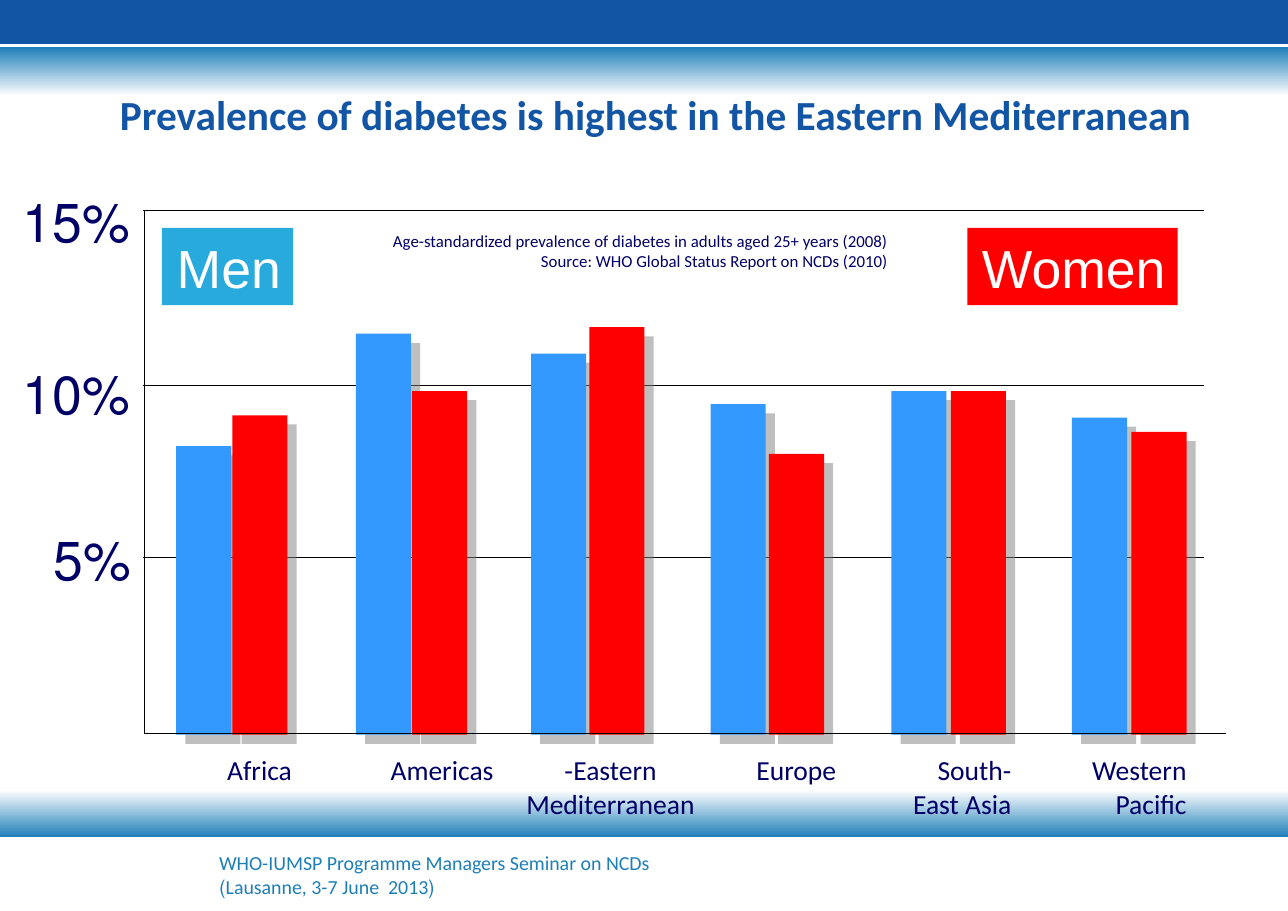
from lxml.etree import SubElement as Sub
from pptx import Presentation as Deck
from pptx.dml.color import RGBColor as Rgb
from pptx.enum.shapes import MSO_CONNECTOR as Link, MSO_SHAPE as Form
from pptx.enum.text import MSO_ANCHOR as Anchor, MSO_AUTO_SIZE as Fit, PP_ALIGN as Align
from pptx.oxml.ns import qn
from pptx.util import Emu, Pt

PX = 9144
NAVY, DEEP, TEAL, WHITE = "000066", "1255A4", "1E7FB8", "FFFFFF"
BLUE, RED, SKY = "3399FF", "FF0000", "29AADC"
BASE = 667


def px(*nums):
    return [Emu(n * PX) for n in nums]


def hue(code):
    return Rgb.from_string(code)


class Page:
    """Holds the style and the current slide, and draws on it."""

    def __init__(self, deck):
        self.slide = deck.slides.add_slide(deck.slide_layouts[6])
        self.shapes = self.slide.shapes
        self.label = dict(name="Calibri", size=Pt(18), color=NAVY)
        self.big = dict(name="Arial", size=Pt(35), color=NAVY)

    def rect(self, box, fill):
        shape = self.shapes.add_shape(Form.RECTANGLE, *px(*box))
        shape.shadow.inherit = False
        shape.fill.solid()
        shape.fill.fore_color.rgb = hue(fill)
        shape.line.fill.background()
        return shape

    def fade(self, box, turn=0):
        shape = self.rect(box, WHITE)
        shape.fill.gradient()
        shape.fill.gradient_angle = 270
        for stop, code in zip(shape.fill.gradient_stops, (TEAL, WHITE)):
            stop.color.rgb = hue(code)
        shape.rotation = turn

    def bar(self, left, top, fill):
        shape = self.rect((left, top, 50, BASE - top), fill)
        group = shape._element.spPr.find(qn("a:effectLst"))
        shade = Sub(group, qn("a:outerShdw"), dist=str(Pt(8.5)), dir="2700000",
                    algn="ctr", rotWithShape="0")
        tint = Sub(shade, qn("a:srgbClr"), val="808080")
        Sub(tint, qn("a:alpha"), val="50000")

    def line(self, *ends):
        link = self.shapes.add_connector(Link.STRAIGHT, *px(*ends))
        link.line.color.rgb = hue("000000")
        link.line.width = Pt(0.75)
        Sub(link._element.spPr, qn("a:effectLst"))

    def words(self, shape, paras, style, align=Align.RIGHT, pad=(11, 6)):
        frame = shape.text_frame
        side, edge = px(*pad)
        form = dict(word_wrap=False, auto_size=Fit.SHAPE_TO_FIT_TEXT,
                    vertical_anchor=Anchor.TOP, margin_left=side,
                    margin_right=side, margin_top=edge, margin_bottom=edge)
        for key, val in form.items():
            setattr(frame, key, val)
        for i, part in enumerate(paras):
            para = frame.add_paragraph() if i else frame.paragraphs[0]
            para.text = part
            para.alignment = align
            para._p.get_or_add_pPr().set("rtl", "1")
            for run in para.runs:
                for key, val in style.items():
                    if key == "color":
                        run.font.color.rgb = hue(val)
                    else:
                        setattr(run.font, key, val)

    def text(self, box, paras, style, **more):
        self.words(self.shapes.add_textbox(*px(*box)), paras, style, **more)

    def key(self, box, name, fill):
        self.words(self.rect(box, fill), [name], self.big | dict(color=WHITE))


def main():
    deck = Deck()
    deck.slide_width, deck.slide_height = px(1169, 827)
    page = Page(deck)
    label = page.label

    page.rect((0, 0, 1169, 40), DEEP)
    page.fade((0, 43, 1169, 44))
    page.fade((0, 717, 1169, 43), 180)
    page.text((189, 767, 431, 54),
              ["WHO-IUMSP Programme Managers Seminar on NCDs",
               "(Lausanne, 3-7 June  2013)"],
              label | dict(size=Pt(13), color=TEAL),
              align=Align.LEFT, pad=(10, 5))

    for y in (350, 506):
        page.line(130, y, 1093, y)
    men = [(160, 405), (323, 303), (482, 321), (645, 367), (809, 355), (973, 379)]
    women = [(211, 377), (374, 355), (535, 297), (698, 412), (863, 355), (1027, 392)]
    for bars, fill in ((men, BLUE), (women, RED)):
        for left, top in bars:
            page.bar(left, top, fill)
    page.line(132, 666, 1113, 666)
    page.line(131, 666, 131, 192)
    page.line(130, 191, 1093, 191)

    areas = [(194, 82, ["Africa"]), (342, 117, ["Americas"]),
             (465, 178, ["Eastern-", "Mediterranean"]), (674, 96, ["Europe"]),
             (816, 113, ["South-\nEast Asia"]), (978, 110, ["Western\nPacific"])]
    for left, wide, paras in areas:
        rows = len("\n".join(paras).split("\n"))
        align = Align.CENTER if len(paras) > 1 else Align.RIGHT
        page.text((left, 678, wide, 12 + 30 * rows), paras, label, align=align)

    for left, top, wide, tick in ((36, 472, 94, "5%"), (8, 322, 121, "10%"),
                                  (8, 166, 121, "15%")):
        page.text((left, top, wide, 70), [tick], page.big)
    page.key((147, 207, 119, 70), "Men", SKY)
    page.key((878, 207, 191, 70), "Women", RED)

    page.text((336, 203, 481, 49),
              ["Age-standardized prevalence of diabetes in adults aged 25+ years (2008)",
               "Source: WHO Global Status Report on NCDs (2010)"],
              label | dict(size=Pt(11)))
    page.text((86, 75, 1006, 57),
              ["Prevalence of diabetes is highest in the Eastern Mediterranean"],
              label | dict(size=Pt(27), color=DEEP, bold=True))
    deck.save("out.pptx")


if __name__ == "__main__":
    main()
